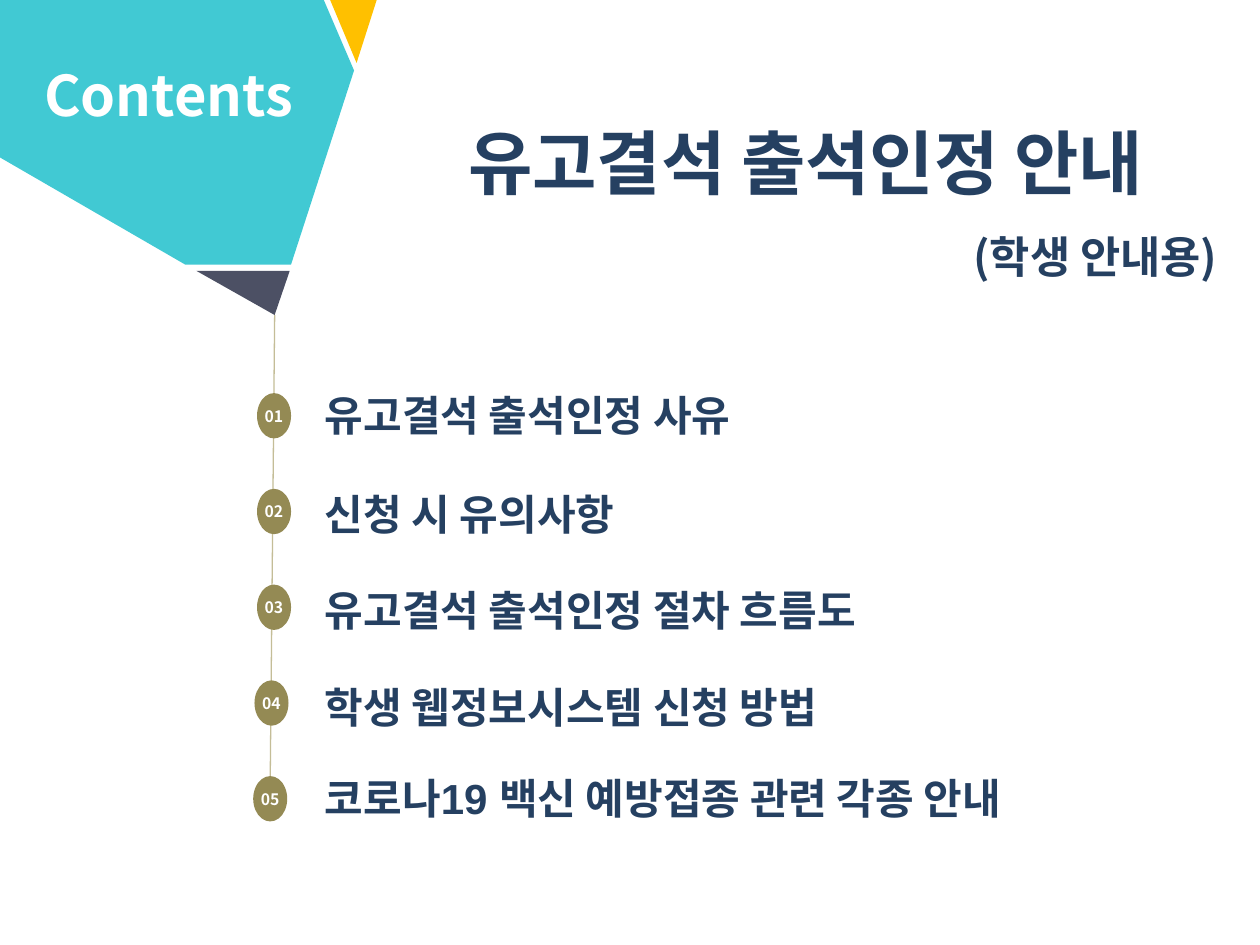
import dataclasses

import lxml.etree
import pptx
import pptx.dml.color
import pptx.enum.shapes
import pptx.enum.text
import pptx.oxml.ns
import pptx.util

Inches = pptx.util.Inches
Align = pptx.enum.text.PP_ALIGN


@dataclasses.dataclass(frozen=True)
class Theme:
    """Colours, fonts and type sizes of the slide."""
    teal: str = "41C9D3"
    gold: str = "FFC000"
    slate: str = "4C5064"
    olive: str = "948A54"
    sand: str = "C4BD97"
    navy: str = "254061"
    white: str = "FFFFFF"
    sans: str = "Noto Sans CJK KR"
    plain: str = "Arial"
    title: int = 40
    label: int = 32
    sub: int = 25
    item: int = 24
    badge: int = 9


THEME = Theme()
SHARDS = [
    (THEME.gold, [(2.62, 0), (3, 0), (2.99, 0), (2.83, 0.5)]),
    (THEME.teal, [(0, 0), (2.57, 0), (2.81, 0.56), (2.31, 2.1), (1.47, 2.1), (0, 1.25)]),
    (THEME.slate, [(1.56, 2.15), (2.3, 2.15), (2.18, 2.5)]),
]
ITEMS = [
    ("유고결석 출석인정 사유", 2.04, 3.04, 4.96),
    ("신청 시 유의사항", 2.04, 3.83, 7.17),
    ("유고결석 출석인정 절차 흐름도", 2.04, 4.59, 7.17),
    ("학생 웹정보시스템 신청 방법", 2.02, 5.36, 6.61),
    ("코로나19 백신 예방접종 관련 각종 안내", 2.01, 6.08, 6.61),
]


def rgb(code):
    """Return the colour for a hex code."""
    return pptx.dml.color.RGBColor.from_string(code)


def paint(shape, color):
    """Give a shape a flat fill with no line or shadow."""
    shape.shadow.inherit = False
    shape.fill.solid()
    shape.fill.fore_color.rgb = rgb(color)
    shape.line.fill.background()


def write(para, text, size, color, font=THEME.sans, align=Align.LEFT, space=None):
    """Write bold text into a paragraph in the given format."""
    para.alignment = align
    para.line_spacing = space
    run = para.add_run()
    run.text = text
    run.font.size = pptx.util.Pt(size)
    run.font.bold = True
    run.font.color.rgb = rgb(color)
    run.font.name = font
    east = lxml.etree.SubElement(run.font._element, pptx.oxml.ns.qn("a:ea"))
    east.set("typeface", THEME.sans)


def frame(slide, left, top, width, height):
    """Add a wrapping text box and return its text frame."""
    box = slide.shapes.add_textbox(*map(Inches, (left, top, width, height)))
    box.text_frame.word_wrap = True
    return box.text_frame


def corner(slide, left, top):
    """Draw the shards and their label from the given corner."""
    group = slide.shapes.add_group_shape()
    for color, points in SHARDS:
        start, *rest = [(Inches(left + x), Inches(top + y)) for x, y in points]
        path = group.shapes.build_freeform(*start)
        path.add_line_segments(rest, close=True)
        paint(path.convert_to_shape(), color)
    label = frame(slide, left + 0.04, top + 0.43, 2.6, 0.64)
    write(label.paragraphs[0], "Contents", THEME.label, THEME.white, align=Align.CENTER)


def header(slide, left, top, width, height):
    """Place the title and its subtitle in the given box."""
    text = frame(slide, left, top, width, height)
    write(text.paragraphs[0], "유고결석 출석인정 안내", THEME.title, THEME.navy,
          align=Align.CENTER, space=1.5)
    write(text.add_paragraph(), "(학생 안내용)", THEME.sub, THEME.navy,
          align=Align.RIGHT, space=1.5)


def rail(slide, left, top):
    """Draw the thin line that falls from the shards."""
    line = slide.shapes.add_connector(
        pptx.enum.shapes.MSO_CONNECTOR.STRAIGHT,
        *map(Inches, (left, top, left - 0.04, top + 3.66)))
    line.line.color.rgb = rgb(THEME.sand)
    line.line.width = pptx.util.Pt(0.75)
    lxml.etree.SubElement(line._element.spPr, pptx.oxml.ns.qn("a:effectLst"))
    return line


def badge(slide, left, top, text):
    """Add a numbered oval and return it."""
    oval = slide.shapes.add_shape(
        pptx.enum.shapes.MSO_SHAPE.OVAL, *map(Inches, (left, top, 0.27, 0.36)))
    paint(oval, THEME.olive)
    body = oval.text_frame
    body.margin_left = body.margin_right = body.margin_top = body.margin_bottom = 0
    body.vertical_anchor = pptx.enum.text.MSO_ANCHOR.MIDDLE
    write(body.paragraphs[0], text, THEME.badge, THEME.white, align=Align.CENTER)
    return oval


def agenda(slide, line, left, top, step):
    """List the numbered items and hang the line on the last oval."""
    for index, (text, side, high, width) in enumerate(ITEMS):
        oval = badge(slide, side, top + step * index, f"{index + 1:02}")
        body = frame(slide, left, high, width, 0.5)
        write(body.paragraphs[0], text, THEME.item, THEME.navy, font=THEME.plain)
    line.end_connect(oval, 0)


def main():
    """Build the contents slide and save it."""
    deck = pptx.Presentation()
    deck.slide_width, deck.slide_height = Inches(10), Inches(7.5)
    slide = deck.slides.add_slide(deck.slide_layouts[6])
    line = rail(slide, 2.18, 2.5)
    corner(slide, 0, 0)
    header(slide, 3.03, 0.57, 6.73, 1.93)
    agenda(slide, line, 2.48, 3.12, 0.76)
    deck.save("out.pptx")


if __name__ == "__main__":
    main()
